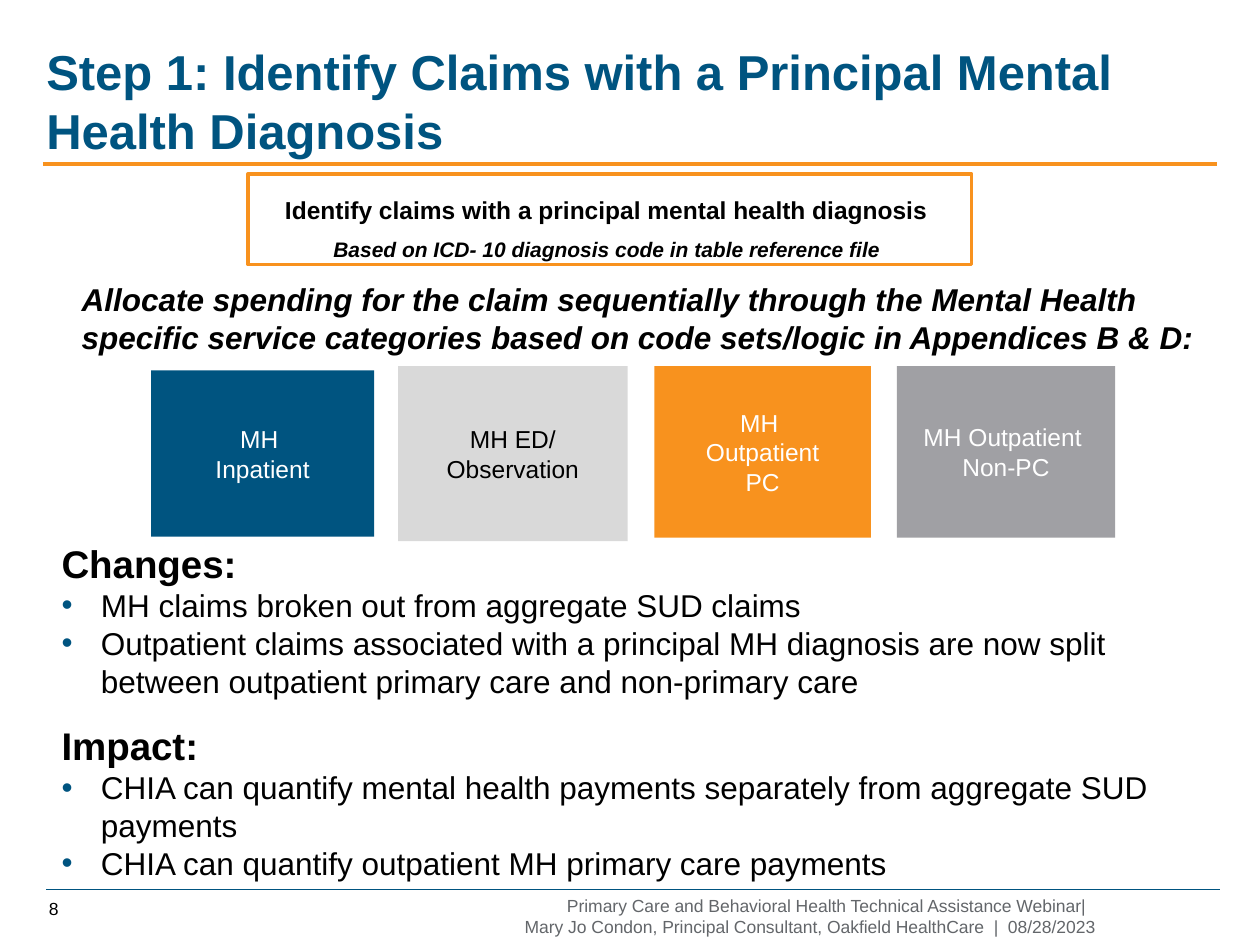
import dataclasses

import lxml.etree
import pptx
import pptx.dml.color
import pptx.enum.shapes
import pptx.enum.text
import pptx.oxml.ns
import pptx.util

Pt = pptx.util.Pt
Align = pptx.enum.text.PP_ALIGN
Anchor = pptx.enum.text.MSO_ANCHOR


@dataclasses.dataclass(frozen=True)
class Theme:
    font: str = "Arial"
    blue: str = "005480"
    orange: str = "F8921E"
    light: str = "D9D9D9"
    gray: str = "A0A0A4"
    footer: str = "63666A"
    black: str = "000000"
    white: str = "FFFFFF"
    title_size: int = 28
    heading_size: int = 22
    body_size: int = 18
    label_size: int = 14
    note_size: int = 12
    footer_size: int = 10


THEME = Theme()


def rgb(color):
    return pptx.dml.color.RGBColor.from_string(color)


def add_child(parent, tag, **attributes):
    return lxml.etree.SubElement(parent, pptx.oxml.ns.qn(tag), attributes)


def write(frame, text, size=THEME.body_size, color=THEME.black, bold=False,
          italic=False, align=Align.LEFT, spacing=None, before=0, bullet=False):
    for line in text.split("\n"):
        para = frame.paragraphs[0]
        if para.runs:
            para = frame.add_paragraph()
        para.alignment = align
        if spacing:
            para.line_spacing = spacing
        if before:
            para.space_before = Pt(before)
        if bullet:
            properties = para._p.get_or_add_pPr()
            properties.set("marL", str(Pt(22.5)))
            properties.set("indent", str(-Pt(22.5)))
            bullet_color = add_child(properties, "a:buClr")
            add_child(bullet_color, "a:srgbClr", val=THEME.blue)
            add_child(properties, "a:buFont", typeface=THEME.font)
            add_child(properties, "a:buChar", char="•")
        span = para.add_run()
        span.text = line
        span.font.name = THEME.font
        span.font.size = Pt(size)
        span.font.bold = bold
        span.font.italic = italic
        span.font.color.rgb = rgb(color)


class Page:
    def __init__(self, deck, theme):
        self.theme = theme
        self.shapes = deck.slides.add_slide(deck.slide_layouts[6]).shapes

    def text_box(self, left, top, width, height, anchor=Anchor.TOP):
        box = self.shapes.add_textbox(Pt(left), Pt(top), Pt(width), Pt(height))
        box.text_frame.word_wrap = True
        box.text_frame.vertical_anchor = anchor
        return box.text_frame

    def panel(self, left, top, width, height, fill, line=None, anchor=Anchor.TOP):
        box = self.shapes.add_shape(
            pptx.enum.shapes.MSO_SHAPE.RECTANGLE,
            Pt(left), Pt(top), Pt(width), Pt(height))
        box.shadow.inherit = False
        box.fill.solid()
        box.fill.fore_color.rgb = rgb(fill)
        if line:
            box.line.color.rgb = rgb(line)
            box.line.width = Pt(2)
        else:
            box.line.fill.background()
        box.text_frame.word_wrap = True
        box.text_frame.vertical_anchor = anchor
        return box.text_frame

    def rule(self, left, right, top, color, weight):
        line = self.shapes.add_connector(
            pptx.enum.shapes.MSO_CONNECTOR.STRAIGHT,
            Pt(left), Pt(top), Pt(right), Pt(top))
        line.line.color.rgb = rgb(color)
        line.line.width = Pt(weight)
        add_child(line._element.spPr, "a:effectLst")

    def section(self, frame, heading, points, before=0):
        write(frame, heading, size=self.theme.heading_size, bold=True, before=before)
        for point in points:
            write(frame, point, bullet=True)


def main():
    deck = pptx.Presentation()
    deck.slide_width, deck.slide_height = Pt(720), Pt(540)
    page = Page(deck, THEME)

    title = page.text_box(19.4, 19.6, 632.2, 74.9, Anchor.BOTTOM)
    write(title, "Step 1: Identify Claims with a Principal Mental Health Diagnosis",
          size=THEME.title_size, color=THEME.blue, bold=True)
    number = page.text_box(20.9, 504.5, 41.8, 28.8, Anchor.MIDDLE)
    write(number, "8", size=THEME.footer_size)
    page.rule(26.4, 697.4, 508.3, THEME.blue, 0.75)
    page.rule(24.5, 695.5, 93.6, THEME.orange, 2.25)

    body = page.text_box(28.1, 304.9, 640.8, 204.5)
    page.section(body, "Changes:", [
        "MH claims broken out from aggregate SUD claims",
        "Outpatient claims associated with a principal MH diagnosis are now split "
        "between outpatient primary care and non-primary care",
    ])
    page.section(body, "Impact:", [
        "CHIA can quantify mental health payments separately from aggregate SUD payments",
        "CHIA can quantify outpatient MH primary care payments",
    ], before=13)

    banner = page.panel(141.8, 99.4, 413.5, 51.8, THEME.white, THEME.orange)
    write(banner, "Identify claims with a principal mental health diagnosis ",
          size=THEME.label_size, bold=True, align=Align.CENTER, spacing=1.5)
    write(banner, "Based on ICD- 10 diagnosis code in table reference file ",
          size=THEME.note_size, bold=True, italic=True, align=Align.CENTER, spacing=1.5)

    lead = page.panel(39.6, 156.3, 658.1, 51.1, THEME.white)
    write(lead, "Allocate spending for the claim sequentially through the Mental Health "
          "specific service categories based on code sets/logic in Appendices B & D:",
          bold=True, italic=True)

    categories = [
        ("MH \nInpatient", 86.4, 211.7, 127.4, 95, THEME.blue, THEME.white),
        ("MH ED/\nObservation", 227.5, 209.2, 131.2, 100, THEME.light, THEME.black),
        ("MH \nOutpatient\nPC", 373.9, 209.2, 123.8, 98, THEME.orange, THEME.white),
        ("MH Outpatient \nNon-PC", 512.6, 209.2, 124.6, 98, THEME.gray, THEME.white),
    ]
    for label, left, top, width, height, fill, color in categories:
        category = page.panel(left, top, width, height, fill, anchor=Anchor.MIDDLE)
        write(category, label, size=THEME.label_size, color=color, align=Align.CENTER)

    footer = page.text_box(282.2, 509, 350.6, 28.8, Anchor.MIDDLE)
    write(footer, "Primary Care and Behavioral Health Technical Assistance Webinar|  \n"
          "Mary Jo Condon, Principal Consultant, Oakfield HealthCare  |  08/28/2023",
          size=THEME.footer_size, color=THEME.footer, align=Align.RIGHT)

    deck.save("out.pptx")


if __name__ == "__main__":
    main()
